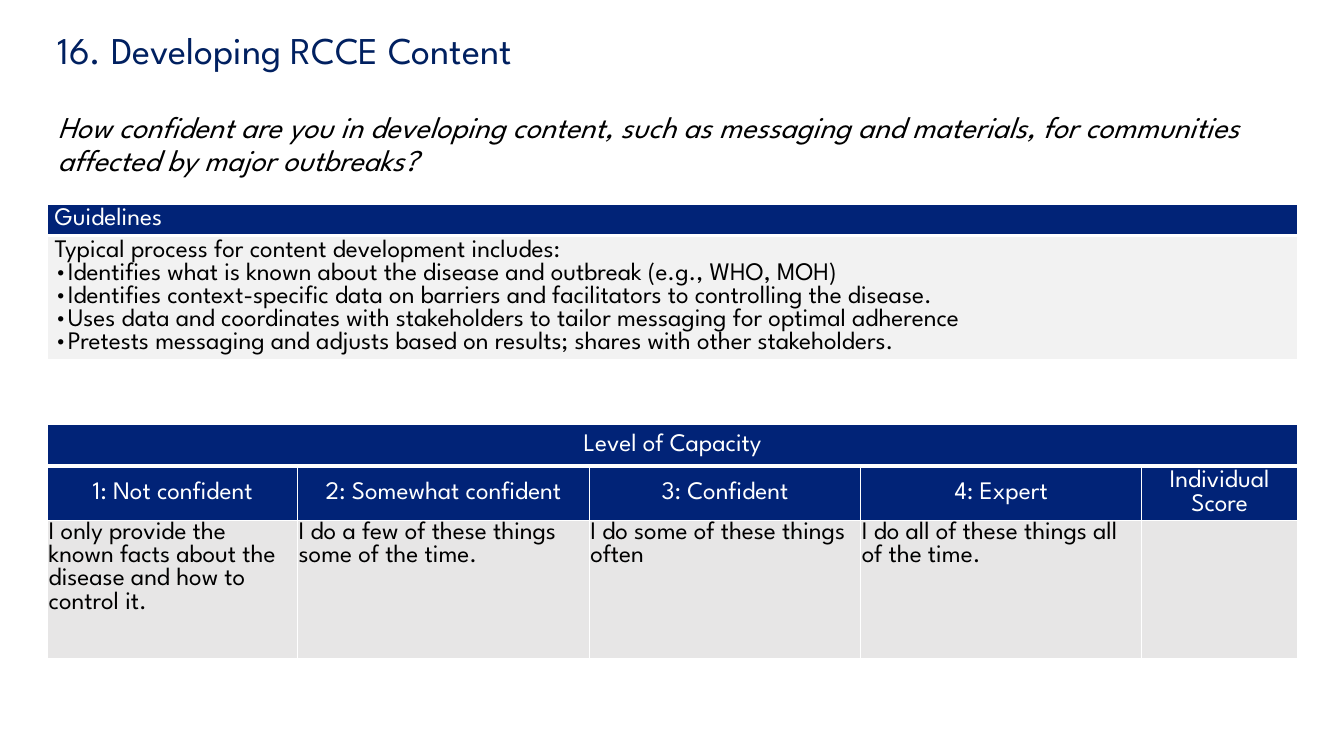
from dataclasses import dataclass

from lxml.etree import SubElement
from pptx import Presentation
from pptx.dml.color import RGBColor
from pptx.enum.text import MSO_ANCHOR, MSO_AUTO_SIZE, PP_ALIGN
from pptx.oxml.ns import qn
from pptx.util import Inches, Pt


@dataclass(frozen=True)
class Theme:
    font: str = "League Spartan"
    title_color: str = "002060"
    header_fill: str = "012377"
    guide_fill: str = "F2F2F2"
    level_fill: str = "E7E6E6"
    white: str = "FFFFFF"
    black: str = "000000"
    title_size: float = 27
    question_size: float = 21.6
    table_size: float = 18
    thin: float = 1
    thick: float = 3


@dataclass(frozen=True)
class CellStyle:
    fill: str
    color: str
    insets: tuple = (0.07, 0.04, 0.07, 0.04)
    align: PP_ALIGN = PP_ALIGN.LEFT
    anchor: MSO_ANCHOR = MSO_ANCHOR.TOP


class SlideBuilder:
    def __init__(self, deck, theme):
        self.deck = deck
        self.theme = theme
        self.page = deck.slides.add_slide(deck.slide_layouts[5])

    def across(self, percent):
        return round(self.deck.slide_width * percent / 100)

    def down(self, percent):
        return round(self.deck.slide_height * percent / 100)

    def span(self, para, text, size, color, italic=False):
        span = para.add_run()
        span.text = text
        span.font.name = self.theme.font
        span.font.size = Pt(size)
        span.font.bold = False
        span.font.italic = italic
        span.font.color.rgb = RGBColor.from_string(color)

    def title(self, left, top, width, height, heading, question):
        box = self.page.shapes.title
        box.left, box.top = self.across(left), self.down(top)
        box.width, box.height = self.across(width), self.down(height)
        frame = box.text_frame
        frame.word_wrap = True
        frame.auto_size = MSO_AUTO_SIZE.NONE
        frame.vertical_anchor = MSO_ANCHOR.TOP
        frame.margin_left = frame.margin_right = frame.margin_top = Inches(0.1)
        para = frame.paragraphs[0]
        para.alignment = PP_ALIGN.LEFT
        para.line_spacing = Pt(27)
        self.span(para, heading, self.theme.title_size, self.theme.title_color)
        para = frame.add_paragraph()
        para.alignment = PP_ALIGN.LEFT
        para.line_spacing = Pt(23.6)
        para.space_before = Pt(28)
        self.span(para, question, self.theme.question_size, self.theme.black, italic=True)

    def table(self, left, top, columns, rows):
        frame = self.page.shapes.add_table(
            len(rows), len(columns), self.across(left), self.down(top),
            self.across(sum(columns)), self.down(sum(rows)))
        for column, width in zip(frame.table.columns, columns):
            column.width = self.across(width)
        for row, height in zip(frame.table.rows, rows):
            row.height = self.down(height)
        return frame.table

    def row(self, table, index, texts, style):
        for column, lines in enumerate(texts):
            self.cell(table.cell(index, column), lines, style, index)

    def cell(self, cell, lines, style, index):
        cell.fill.solid()
        cell.fill.fore_color.rgb = RGBColor.from_string(style.fill)
        insets = [Inches(inset) for inset in style.insets]
        cell.margin_left, cell.margin_top, cell.margin_right, cell.margin_bottom = insets
        cell.vertical_anchor = style.anchor
        self.borders(cell, index)
        for number, line in enumerate(lines):
            frame = cell.text_frame
            para = frame.add_paragraph() if number else frame.paragraphs[0]
            para.alignment = style.align
            if number:
                self.bullet(para)
            self.span(para, line, self.theme.table_size, style.color)

    def borders(self, cell, index):
        thin, thick = self.theme.thin, self.theme.thick
        widths = {
            "a:lnL": thin,
            "a:lnR": thin,
            "a:lnT": thick if index == 1 else thin,
            "a:lnB": thick if index == 0 else thin,
        }
        properties = cell._tc.get_or_add_tcPr()
        for position, (tag, width) in enumerate(widths.items()):
            line = SubElement(properties, qn(tag), w=str(Pt(width)))
            fill = SubElement(line, qn("a:solidFill"))
            SubElement(fill, qn("a:srgbClr"), val=self.theme.white)
            properties.insert(position, line)

    def bullet(self, para):
        properties = para._p.get_or_add_pPr()
        indent = Inches(0.13)
        properties.set("marL", str(indent))
        properties.set("indent", str(-indent))
        SubElement(properties, qn("a:buFont"), typeface=self.theme.font)
        SubElement(properties, qn("a:buChar"), char="•")


def main():
    deck = Presentation()
    deck.slide_width, deck.slide_height = Inches(13.33), Inches(7.5)
    theme = Theme()
    builder = SlideBuilder(deck, theme)
    left = 3.55

    builder.title(
        left, 3.2, 93, 15.73, "16. Developing RCCE Content",
        "How confident are you in developing content, such as messaging and "
        "materials, for communities affected by major outbreaks?")

    level_header = CellStyle(theme.header_fill, theme.white,
                             align=PP_ALIGN.CENTER, anchor=MSO_ANCHOR.MIDDLE)
    level_body = CellStyle(theme.level_fill, theme.black, (0.01, 0.01, 0.01, 0))
    capacity = builder.table(left, 56.2, [18.6, 21.7, 20.2, 20.9, 11.6], [5.47, 7.2, 18.27])
    builder.row(capacity, 0, [["Level of Capacity"], [], [], [], []], level_header)
    capacity.cell(0, 0).merge(capacity.cell(0, 4))
    builder.row(capacity, 1, [
        ["1: Not confident"], ["2: Somewhat confident"], ["3: Confident"],
        ["4: Expert"], ["Individual Score"]], level_header)
    builder.row(capacity, 2, [
        ["I only provide the known facts about the disease and how to control it."],
        ["I do a few of these things some of the time."],
        ["I do some of these things often"],
        ["I do all of these things all of the time."],
        []], level_body)

    guidelines = builder.table(left, 27, [93], [4.13, 16.4])
    builder.row(guidelines, 0, [["Guidelines"]], CellStyle(theme.header_fill, theme.white))
    builder.row(guidelines, 1, [[
        "Typical process for content development includes:",
        "Identifies what is known about the disease and outbreak (e.g., WHO, MOH)",
        "Identifies context-specific data on barriers and facilitators to controlling the disease.",
        "Uses data and coordinates with stakeholders to tailor messaging for optimal adherence",
        "Pretests messaging and adjusts based on results; shares with other stakeholders.",
    ]], CellStyle(theme.guide_fill, theme.black))

    deck.save("out.pptx")


if __name__ == "__main__":
    main()
